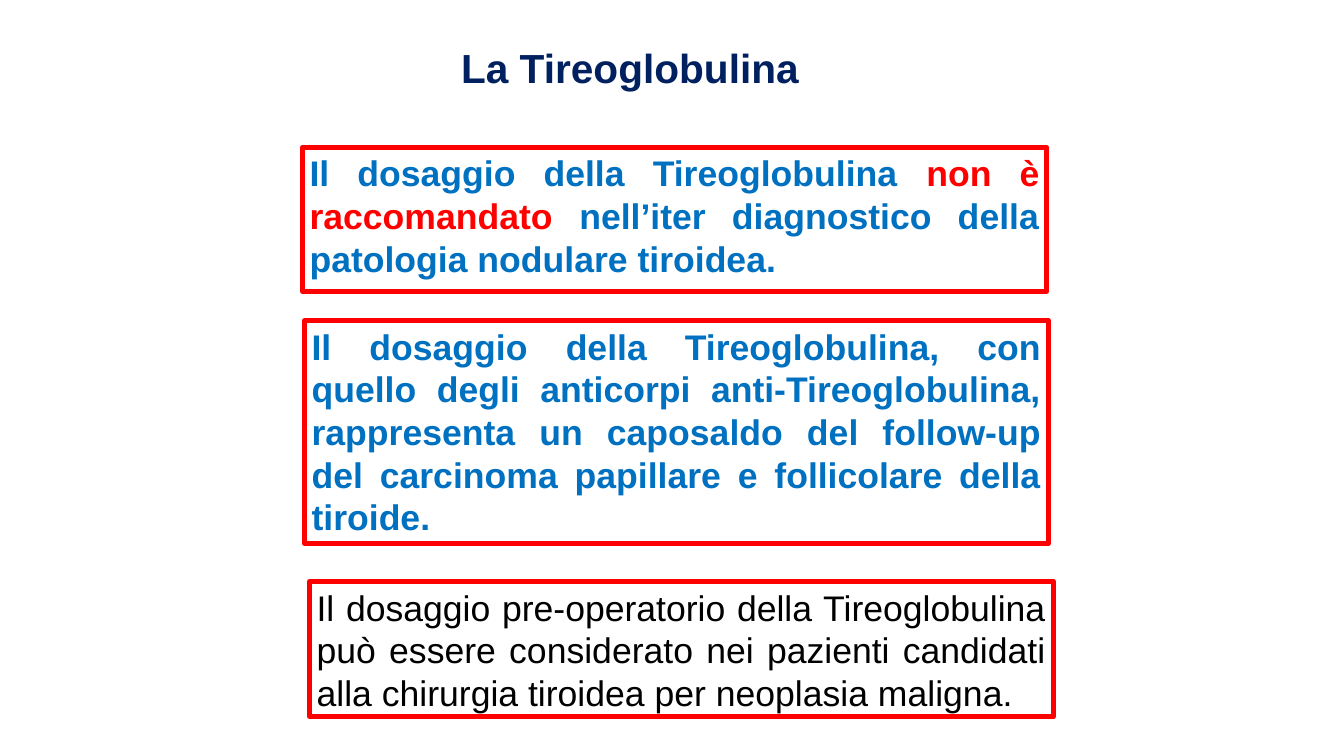
import lxml.etree
import pptx
import pptx.dml.color
import pptx.enum.shapes
import pptx.enum.text
import pptx.oxml.ns
import pptx.util
from dataclasses import dataclass
from pptx.util import Inches

TITLE = "La Tireoglobulina"
TITLE_AREA = (4.19, 0.39, 4.12, 0.68)
STATEMENT_WIDTH = 7.38

# Each statement: left, top, height, bold, runs of (text, colour name)
STATEMENTS = [
    (3.0, 1.46, 1.43, True, [
        ("Il dosaggio della Tireoglobulina ", "blue"),
        ("non è raccomandato", "red"),
        (" nell’iter diagnostico della patologia nodulare tiroidea.", "blue"),
    ]),
    (3.02, 3.18, 2.21, True, [
        ("Il dosaggio della Tireoglobulina, con quello degli anticorpi "
         "anti-Tireoglobulina, rappresenta un caposaldo del follow-up del "
         "carcinoma papillare e follicolare della tiroide.", "blue"),
    ]),
    (3.07, 5.77, 1.34, False, [
        ("Il dosaggio pre-operatorio della Tireoglobulina può essere "
         "considerato nei pazienti candidati alla chirurgia tiroidea per "
         "neoplasia maligna.", "black"),
    ]),
]


@dataclass(frozen=True)
class Theme:
    font: str = "Arial"
    title_size: float = 29
    body_size: float = 25.4
    border_width: float = 3.5
    line_spacing: float = 1.0
    navy: str = "002060"
    blue: str = "0070C0"
    red: str = "FF0000"
    black: str = "000000"
    white: str = "FFFFFF"

    def colour(self, name):
        return pptx.dml.color.RGBColor.from_string(getattr(self, name))


THEME = Theme()


def fill_text(shape, runs, size, bold, alignment, wrap):
    frame = shape.text_frame
    frame.word_wrap = wrap
    frame.auto_size = pptx.enum.text.MSO_AUTO_SIZE.NONE
    frame.vertical_anchor = pptx.enum.text.MSO_ANCHOR.TOP
    frame.margin_left = frame.margin_right = Inches(0.07)
    frame.margin_top = frame.margin_bottom = Inches(0.04)
    paragraph = frame.paragraphs[0]
    paragraph.alignment = alignment
    paragraph.line_spacing = THEME.line_spacing
    paragraph.space_before = pptx.util.Pt(0)
    for text, colour_name in runs:
        run = paragraph.add_run()
        run.text = text
        run.font.name = THEME.font
        run.font.size = pptx.util.Pt(size)
        run.font.bold = bold
        run.font.color.rgb = THEME.colour(colour_name)


def add_title(slide):
    title = slide.shapes.title
    title.left, title.top, title.width, title.height = map(Inches, TITLE_AREA)
    fill_text(title, [(TITLE, "navy")], THEME.title_size, True,
              pptx.enum.text.PP_ALIGN.CENTER, False)


def add_statement(slide, left, top, height, bold, runs):
    box = slide.shapes.add_shape(
        pptx.enum.shapes.MSO_SHAPE.RECTANGLE,
        Inches(left), Inches(top), Inches(STATEMENT_WIDTH), Inches(height))
    box.shadow.inherit = False
    box.fill.solid()
    box.fill.fore_color.rgb = THEME.colour("white")
    box.line.color.rgb = THEME.colour("red")
    box.line.width = pptx.util.Pt(THEME.border_width)
    # Rounded corners on the border
    outline = box.fill._xPr.find(pptx.oxml.ns.qn("a:ln"))
    lxml.etree.SubElement(outline, pptx.oxml.ns.qn("a:round"))
    fill_text(box, runs, THEME.body_size, bold,
              pptx.enum.text.PP_ALIGN.JUSTIFY, True)


def main():
    presentation = pptx.Presentation()
    presentation.slide_width = Inches(13.33)
    presentation.slide_height = Inches(7.5)
    slide = presentation.slides.add_slide(presentation.slide_layouts[5])
    add_title(slide)
    for statement in STATEMENTS:
        add_statement(slide, *statement)
    presentation.save("out.pptx")


if __name__ == "__main__":
    main()
